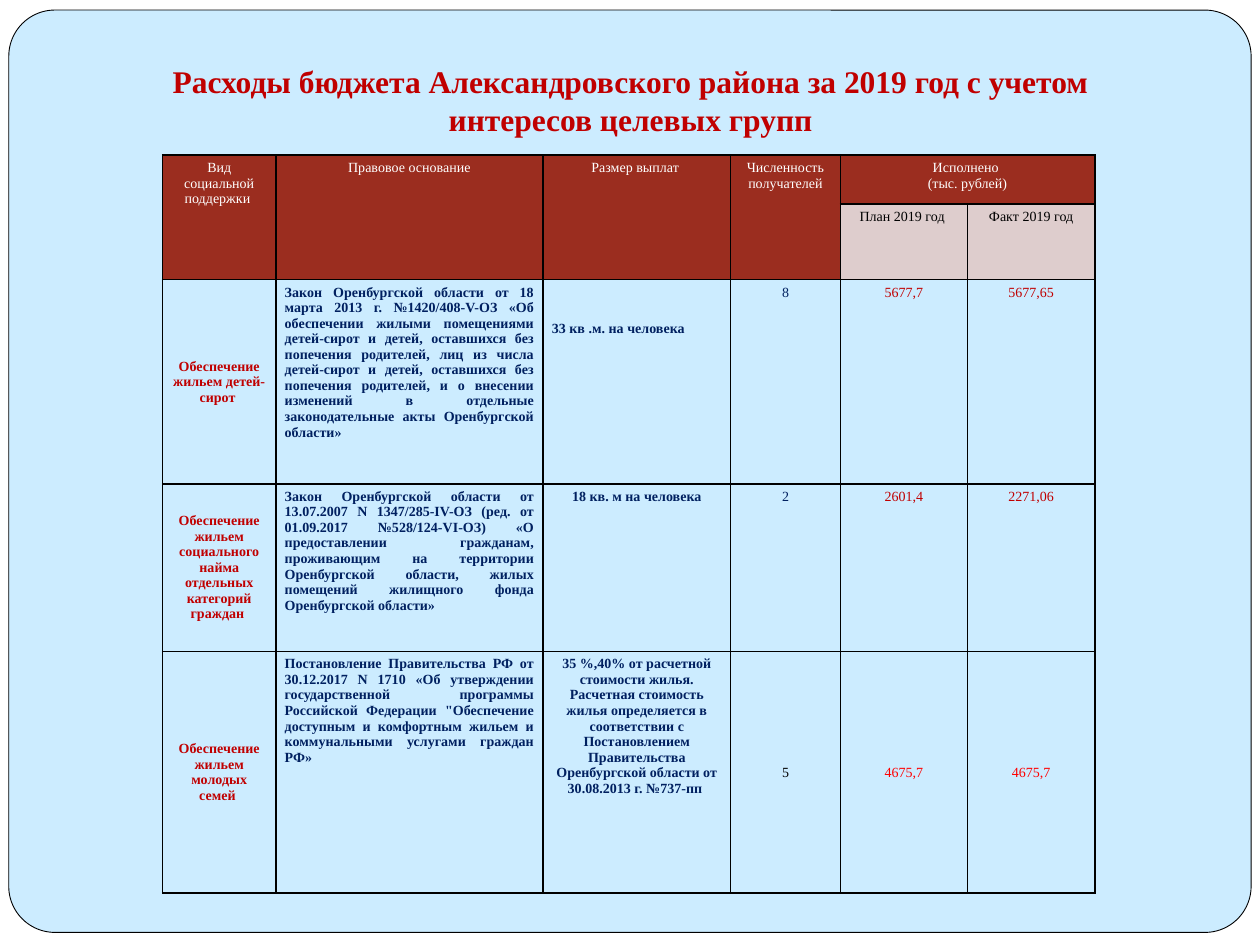
"""Build the slide on district budget spending by target group."""
import dataclasses

import lxml.etree
import pptx
import pptx.dml.color
import pptx.enum.shapes
import pptx.enum.text
import pptx.oxml.ns
import pptx.util

Inches = pptx.util.Inches
Pt = pptx.util.Pt
Align = pptx.enum.text.PP_ALIGN
Anchor = pptx.enum.text.MSO_ANCHOR


@dataclasses.dataclass(frozen=True)
class Theme:
    face: str = "Times New Roman"
    head: float = 18
    small: float = 8
    edge: float = 1
    thin: float = 0.5
    sky: str = "CCECFF"
    brick: str = "9B2D1F"
    blush: str = "DECDCD"
    wine: str = "C00000"
    red: str = "FF0000"
    navy: str = "002060"
    black: str = "000000"
    white: str = "FFFFFF"


THEME = Theme()
COLS = [0.9, 2.12, 1.49, 0.87, 1.01, 1.01]
ROWS = [0.39, 0.6, 1.62, 1.33, 1.92]
MERGES = [(0, col, 1, col) for col in range(4)] + [(0, 4, 0, 5)]
TITLE = "Расходы бюджета Александровского района за 2019 год с учетом интересов целевых групп"

HEAD = {"fill": THEME.brick, "color": THEME.white}
SUB = {"fill": THEME.blush, "color": THEME.black}
NAME = {"color": THEME.wine, "bold": True, "anchor": Anchor.MIDDLE}
LAW = {"color": THEME.navy, "bold": True, "align": Align.JUSTIFY}
SIZE = {"color": THEME.navy, "bold": True}
COUNT = {"color": THEME.navy}
SUM = {"color": THEME.wine}
LOW = {"anchor": Anchor.MIDDLE, "pads": (0.01, 0.01, 0.01, 0)}
BODY = [NAME, LAW, SIZE, COUNT, SUM, SUM]
LAST = [NAME, LAW, SIZE, {**LOW, "color": THEME.black}] + [{**LOW, "color": THEME.red}] * 2
FIRST = BODY[:2] + [{**SIZE, "align": Align.LEFT, "pads": (0.07, 0.33, 0.07, 0.04)}] + BODY[3:]

GRID = [
    (["Вид социальной поддержки ", "Правовое основание", "Размер выплат ",
      "Численность получателей", "Исполнено \n(тыс. рублей)", ""], [HEAD] * 6),
    (["", "", "", "", "План 2019 год ", "Факт 2019 год"], [HEAD] * 4 + [SUB] * 2),
    (["Обеспечение жильем детей-сирот ",
      "Закон Оренбургской области от 18 марта 2013 г. №1420/408-V-ОЗ «Об обеспечении "
      "жилыми помещениями детей-сирот и детей, оставшихся без попечения родителей, лиц "
      "из числа детей-сирот и детей, оставшихся без попечения родителей, и о внесении "
      "изменений в отдельные законодательные акты Оренбургской области»",
      "33 кв .м. на человека ", "8", "5677,7", "5677,65"], FIRST),
    (["Обеспечение жильем социального найма отдельных категорий граждан ",
      "Закон Оренбургской области от 13.07.2007 N 1347/285-IV-ОЗ (ред. от 01.09.2017 "
      "№528/124-VI-ОЗ) «О предоставлении гражданам, проживающим на территории "
      "Оренбургской области, жилых помещений жилищного фонда Оренбургской области»",
      "18 кв. м на человека", "2", "2601,4", "2271,06"], BODY),
    (["Обеспечение жильем молодых семей ",
      "Постановление Правительства РФ от 30.12.2017 N 1710 «Об утверждении "
      "государственной программы Российской Федерации \"Обеспечение доступным и "
      "комфортным жильем и коммунальными услугами граждан РФ»",
      "35 %,40% от расчетной стоимости жилья. Расчетная стоимость жилья определяется в "
      "соответствии с Постановлением Правительства Оренбургской области от 30.08.2013 г. "
      "№737-пп ", "5", "4675,7", "4675,7"], LAST),
]


def shade(code):
    """Turn a hex code into a colour."""
    return pptx.dml.color.RGBColor.from_string(code)


def apply(item, values):
    """Set each named value on an item."""
    for key, value in values.items():
        setattr(item, key, value)


def write(frame, text, size, color, bold=False, align=Align.CENTER):
    """Fill a text frame and format its paragraphs."""
    frame.text = text
    for para in frame.paragraphs:
        para.alignment = align
        apply(para.font, {"name": THEME.face, "size": Pt(size), "bold": bold})
        para.font.color.rgb = shade(color)
        for run in para.runs:
            apply(run.font, {"name": THEME.face, "size": Pt(size), "bold": bold})
            run.font.color.rgb = shade(color)


def rule(cell):
    """Draw the four borders of a cell."""
    props = cell._tc.get_or_add_tcPr()
    name = pptx.oxml.ns.qn
    for side in ("a:lnL", "a:lnR", "a:lnT", "a:lnB"):
        line = lxml.etree.SubElement(props, name(side), w=str(Pt(THEME.edge)))
        fill = lxml.etree.SubElement(line, name("a:solidFill"))
        lxml.etree.SubElement(fill, name("a:srgbClr"), val=THEME.black)


def style(cell, text, color, fill=None, bold=False, align=Align.CENTER,
          anchor=Anchor.TOP, pads=(0.07, 0.04, 0.07, 0.04)):
    """Write and format one cell."""
    write(cell.text_frame, text, THEME.small, color, bold, align)
    left, top, right, base = map(Inches, pads)
    apply(cell, {"margin_left": left, "margin_top": top, "margin_right": right,
                 "margin_bottom": base, "vertical_anchor": anchor})
    rule(cell)
    if fill:
        cell.fill.solid()
        cell.fill.fore_color.rgb = shade(fill)
    else:
        cell.fill.background()


def add_title(slide):
    """Place the slide title."""
    title = slide.shapes.title
    apply(title, {"left": Inches(0.83), "top": Inches(0.44),
                  "width": Inches(8.35), "height": Inches(0.71)})
    apply(title.text_frame, {"word_wrap": True, "vertical_anchor": Anchor.MIDDLE,
                             "auto_size": pptx.enum.text.MSO_AUTO_SIZE.NONE})
    write(title.text_frame, TITLE, THEME.head, THEME.wine, True)


def add_panel(slide):
    """Put the rounded panel behind the title."""
    panel = slide.shapes.add_shape(
        pptx.enum.shapes.MSO_SHAPE.ROUNDED_RECTANGLE,
        Inches(0.07), Inches(0.08), Inches(9.86), Inches(7.32))
    panel.adjustments[0] = 0.05
    panel.shadow.inherit = False
    panel.fill.solid()
    panel.fill.fore_color.rgb = shade(THEME.sky)
    panel.line.color.rgb = shade(THEME.black)
    panel.line.width = Pt(THEME.thin)
    slide.shapes.title.element.addprevious(panel.element)


def add_grid(slide):
    """Add the table of support by group."""
    table = slide.shapes.add_table(
        len(ROWS), len(COLS), Inches(1.29), Inches(1.23),
        Inches(sum(COLS)), Inches(sum(ROWS))).table
    apply(table, {"first_row": False, "horz_banding": False})
    for col, width in zip(table.columns, COLS):
        col.width = Inches(width)
    for row, height in zip(table.rows, ROWS):
        row.height = Inches(height)
    for row, (texts, looks) in zip(table.rows, GRID):
        for cell, text, look in zip(row.cells, texts, looks):
            style(cell, text, **look)
    for top, left, base, right in MERGES:
        table.cell(top, left).merge(table.cell(base, right))


def main():
    """Build and save the slide."""
    deck = pptx.Presentation()
    apply(deck, {"slide_width": Inches(10), "slide_height": Inches(7.5)})
    slide = deck.slides.add_slide(deck.slide_layouts[5])
    add_title(slide)
    add_panel(slide)
    add_grid(slide)
    deck.save("out.pptx")


if __name__ == "__main__":
    main()
